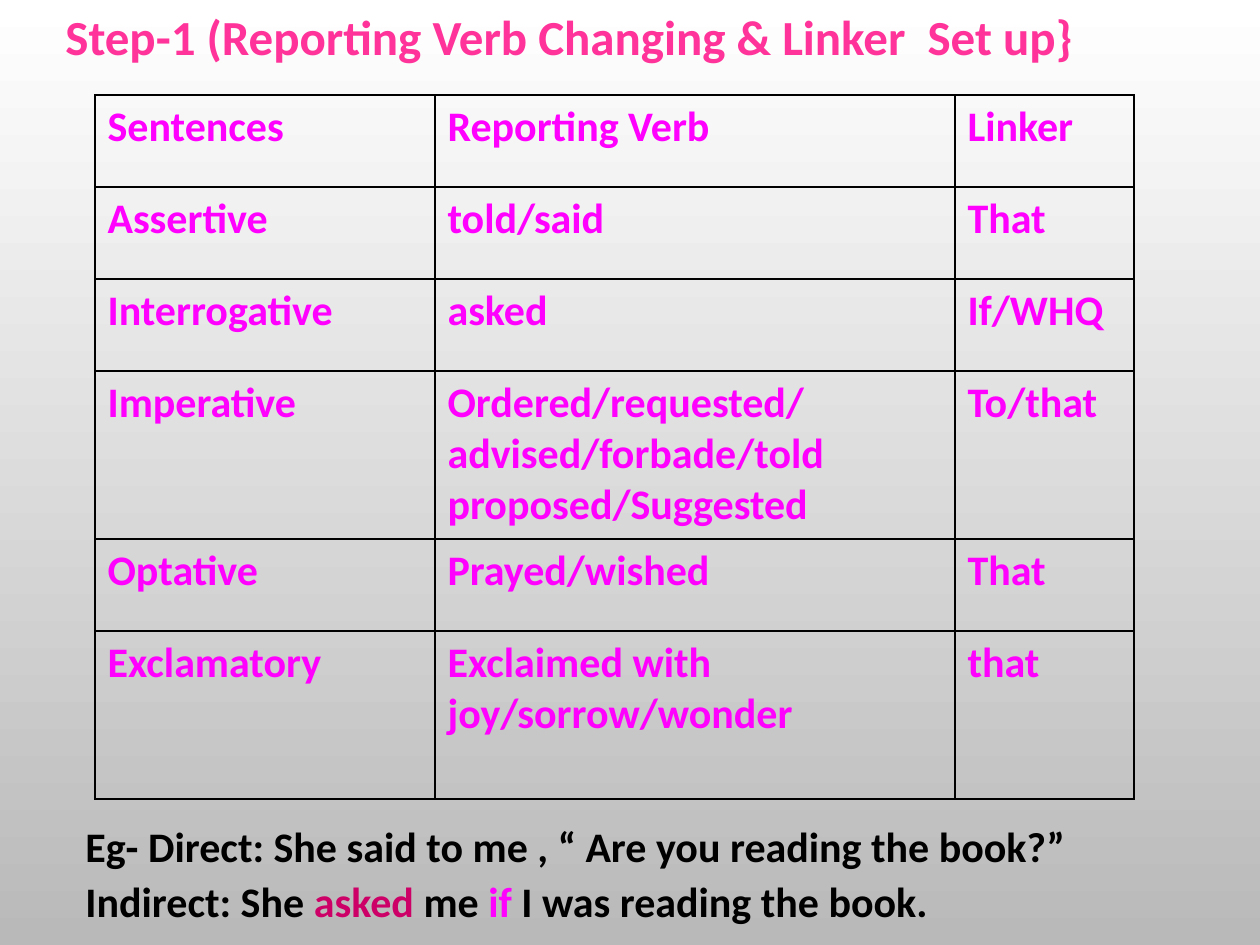
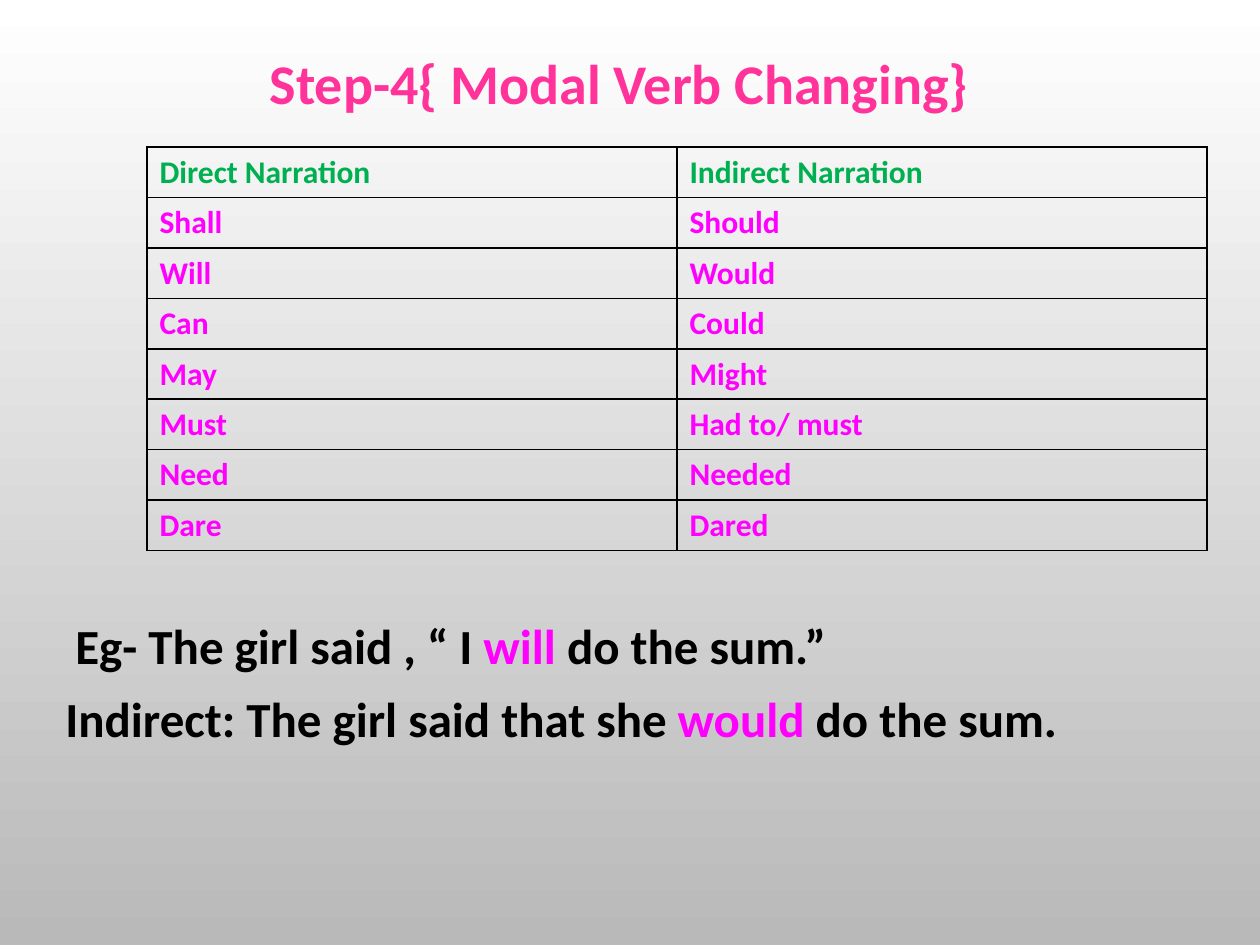
from lxml.etree import SubElement
from pptx import Presentation
from pptx.dml.color import RGBColor
from pptx.enum.text import MSO_AUTO_SIZE as AutoSize, PP_ALIGN as Align
from pptx.oxml.ns import qn
from pptx.util import Pt

FONT = "Calibri"
PINK, MAGENTA, CRIMSON = "FF3399", "FF00FF", "CC0066"
GREEN, BLACK = "00B050", "000000"
BACKGROUND = ("FFFFFF", "B9B9B9")

# Content: boxes are (left, top, width, height) in px
SLIDES = [
    {
        "title": ("Step-1 (Reporting Verb Changing & Linker  Set up}",
                  (53, 0, 1155, 72), 28, Align.LEFT),
        "table": {
            "at": (95, 95), "columns": (340, 520, 179),
            "row_heights": (92, 92, 92, 168, 92, 168),
            "size": 24, "header": MAGENTA,
            "rows": [
                ("Sentences", "Reporting Verb", "Linker"),
                ("Assertive", "told/said", "That"),
                ("Interrogative", "asked", "If/WHQ"),
                ("Imperative",
                 "Ordered/requested/advised/forbade/told\nproposed/Suggested",
                 "To/that"),
                ("Optative", "Prayed/wished", "That"),
                ("Exclamatory", "Exclaimed with joy/sorrow/wonder", "that"),
            ],
        },
        "example_size": 24,
        "examples": [
            ((73, 814, 1071, 63),
             [("Eg- Direct: She said to me , “ Are you reading the book?”", BLACK)]),
            ((73, 869, 977, 63),
             [("Indirect: She ", BLACK), ("asked", CRIMSON), (" me", BLACK),
              (" if ", MAGENTA), ("I was reading the book.", BLACK)]),
        ],
    },
    {
        "title": ("Step-4{ Modal Verb Changing}",
                  (126, 42, 987, 81), 32, Align.CENTER),
        "table": {
            "at": (147, 147), "columns": (530, 530),
            "row_heights": (50,) * 8,
            "size": 18, "header": GREEN,
            "rows": [
                ("Direct Narration", "Indirect Narration"),
                ("Shall", "Should"),
                ("Will", "Would"),
                ("Can", "Could"),
                ("May", "Might"),
                ("Must", "Had to/ must"),
                ("Need", "Needed"),
                ("Dare", "Dared"),
            ],
        },
        "example_size": 28,
        "examples": [
            ((63, 609, 1071, 72),
             [("Eg- The girl said , “ I ", BLACK), ("will ", MAGENTA),
              ("do the sum.”", BLACK)]),
            ((53, 682, 1102, 72),
             [("Indirect: The girl said that she ", BLACK), ("would ", MAGENTA),
              ("do the sum.", BLACK)]),
        ],
    },
]


def px(length):
    return round(length * 914400 / 126)


def rgb(color):
    return RGBColor.from_string(color)


def style(run, size, color):
    run.font.name = FONT
    run.font.size = Pt(size)
    run.font.bold = True
    run.font.color.rgb = rgb(color)


def paint_background(slide):
    fill = slide.background.fill
    fill.gradient()
    fill.gradient_angle = 270
    for stop, color in zip(fill.gradient_stops, BACKGROUND):
        stop.color.rgb = rgb(color)


def add_line_of_text(slide, box, parts, size, align=Align.LEFT):
    text_frame = slide.shapes.add_textbox(*map(px, box)).text_frame
    text_frame.word_wrap = True
    text_frame.auto_size = AutoSize.SHAPE_TO_FIT_TEXT
    paragraph = text_frame.paragraphs[0]
    paragraph.alignment = align
    for text, color in parts:
        run = paragraph.add_run()
        run.text = text
        style(run, size, color)


def outline(cell):
    properties = cell._tc.get_or_add_tcPr()
    for side in ("a:lnL", "a:lnR", "a:lnT", "a:lnB"):
        line = SubElement(properties, qn(side), w=str(Pt(1)))
        fill = SubElement(line, qn("a:solidFill"))
        SubElement(fill, qn("a:srgbClr"), val=BLACK)


def add_grid(slide, grid):
    rows, columns, heights = grid["rows"], grid["columns"], grid["row_heights"]
    box = (*grid["at"], sum(columns), sum(heights))
    table = slide.shapes.add_table(len(rows), len(columns), *map(px, box)).table
    table.first_row = table.horz_banding = False
    for column, width in zip(table.columns, columns):
        column.width = px(width)
    for index, (row, height) in enumerate(zip(table.rows, heights)):
        row.height = px(height)
        color = MAGENTA if index else grid["header"]
        for cell, text in zip(row.cells, rows[index]):
            outline(cell)
            cell.fill.background()
            cell.text_frame.text = text
            for paragraph in cell.text_frame.paragraphs:
                style(paragraph.runs[0], grid["size"], color)


def main():
    presentation = Presentation()
    presentation.slide_width, presentation.slide_height = px(1260), px(945)
    for content in SLIDES:
        slide = presentation.slides.add_slide(presentation.slide_layouts[6])
        paint_background(slide)
        title, box, size, align = content["title"]
        add_line_of_text(slide, box, [(title, PINK)], size, align)
        add_grid(slide, content["table"])
        for box, parts in content["examples"]:
            add_line_of_text(slide, box, parts, content["example_size"])
    presentation.save("out.pptx")


if __name__ == "__main__":
    main()
